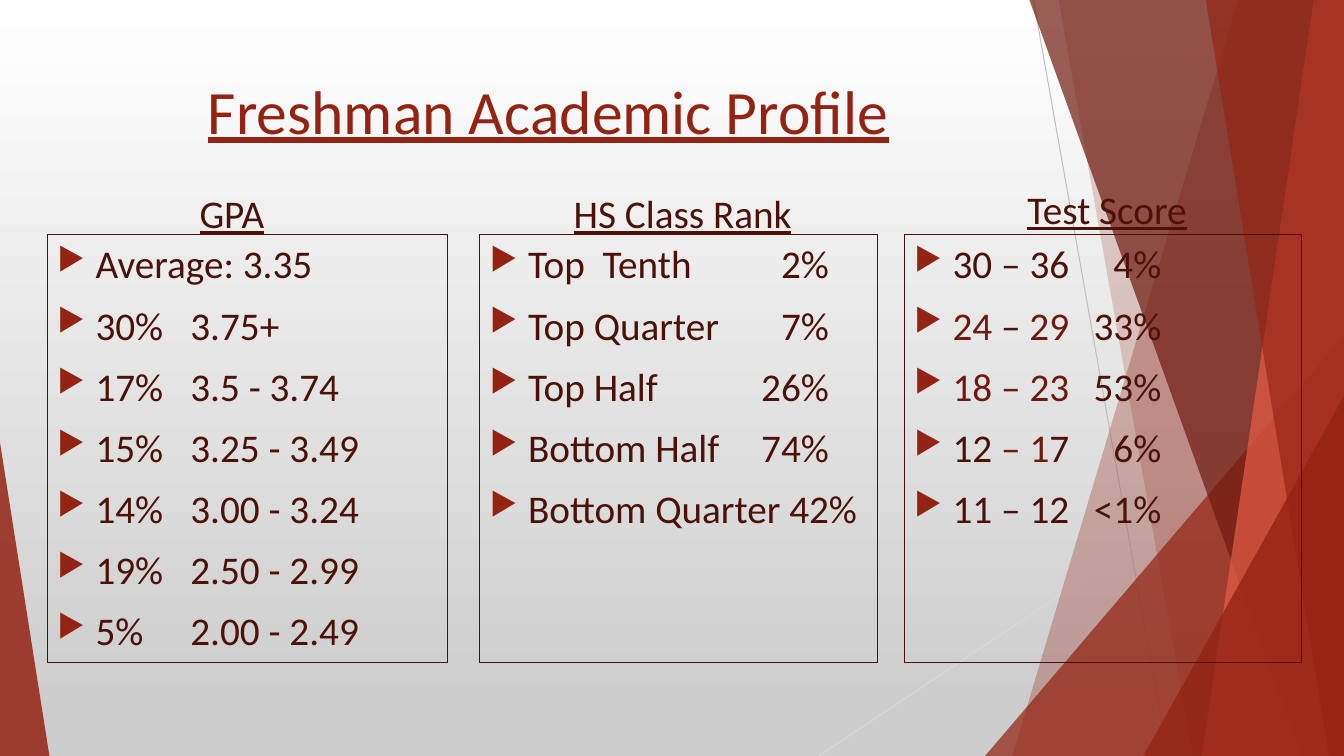
"""Build the Freshman Academic Profile slide with its three boxed score lists."""
from lxml import etree
from pptx import Presentation
from pptx import util as u
from pptx.dml.color import RGBColor
from pptx.enum import shapes, text
from pptx.oxml.ns import qn

RED = RGBColor(0x93, 0x23, 0x13)
DEEP_RED = RGBColor(0x6E, 0x1A, 0x0E)
CORAL = RGBColor(0xE7, 0x5C, 0x48)
MAROON = RGBColor(0x4A, 0x12, 0x09)
WHITE = RGBColor(0xFF, 0xFF, 0xFF)
SILVER = RGBColor(0xCD, 0xCD, 0xCD)
GREY = RGBColor(0xBF, 0xBF, 0xBF)
PALE_GREY = RGBColor(0xD9, 0xD9, 0xD9)
FONT = "Calibri"
WIDTH, HEIGHT = 13.33, 7.5

TITLE = "Freshman Academic Profile"
RAYS = [((10.25, 0), (11.58, HEIGHT), GREY), ((WIDTH, 4.03), (8.12, HEIGHT), PALE_GREY)]
FACETS = [
    ("band", 12.28, 10.04, RED, 30),
    ("band", 10.5, 11.83, RED, 20),
    ("corner", (9.77, 3.33, 3.56, 4.17), 1, RED, 72),
    ("band", 10.21, 12.91, DEEP_RED, 70),
    ("band", 13.03, 11.92, CORAL, 70),
    ("band", 11.96, 13.18, RED, 65),
    ("corner", (11.34, 3.93, 1.99, 3.57), 1, RED, 80),
    ("corner", (0, 4.39, 0.49, 3.11), 0, RED, 85),
]
PROFILES = [
    {"heading": "GPA", "heading_at": (0.55, 1.83), "left": 0.47, "width": 3.97,
     "stop": (1.32, text.PP_ALIGN.LEFT), "rows": [
         "Average: 3.35", "30%\t3.75+", "17%\t3.5 - 3.74", "15%\t3.25 - 3.49",
         "14%\t3.00 - 3.24", "19%\t2.50 - 2.99", "5%\t2.00 - 2.49"]},
    {"heading": "HS Class Rank", "heading_at": (5.02, 1.83), "left": 4.76, "width": 3.94,
     "stop": (3.7, text.PP_ALIGN.RIGHT), "rows": [
         "Top  Tenth\t2%", "Top Quarter\t7%", "Top Half\t26%",
         "Bottom Half\t74%", "Bottom Quarter 42%"]},
    {"heading": "Test Score", "heading_at": (9.23, 1.79), "left": 8.97, "width": 3.94,
     "stop": (2.45, text.PP_ALIGN.RIGHT), "rows": [
         "30 – 36\t4%",
         [("24 ", DEEP_RED), ("–", MAROON), (" 29", DEEP_RED), ("\t33%", MAROON)],
         [("18 – 23", DEEP_RED), ("\t53%", MAROON)],
         [("12 ", MAROON), ("– 1", DEEP_RED), ("7\t6%", MAROON)],
         "11 – 12\t<1%"]},
]
BOX_TOP, BOX_HEIGHT = 2.33, 4.24
HEADING_WIDTH, HEADING_HEIGHT = 3.5, 0.57
INDENT = 0.38


def add_run(paragraph, words, size, color, underline=None):
    run = paragraph.add_run()
    run.text = words
    run.font.name = FONT
    run.font.size = u.Pt(size)
    run.font.color.rgb = color
    run.font.underline = underline


def add_ray(slide, start, end, color):
    ray = slide.shapes.add_connector(
        shapes.MSO_CONNECTOR.STRAIGHT, *map(u.Inches, start + end))
    ray.line.color.rgb = color
    ray.line.width = u.Pt(0.75)
    etree.SubElement(ray._element.spPr, qn("a:effectLst"))


def add_facet(slide, kind, place, turn, color, opacity):
    if kind == "band":
        outline = slide.shapes.build_freeform(u.Inches(place), 0, scale=1.0)
        corners = [(WIDTH, 0), (WIDTH, HEIGHT), (turn, HEIGHT)]
        outline.add_line_segments([(u.Inches(x), u.Inches(y)) for x, y in corners])
        facet = outline.convert_to_shape()
    else:
        facet = slide.shapes.add_shape(
            shapes.MSO_SHAPE.ISOSCELES_TRIANGLE, *map(u.Inches, place))
        facet.adjustments[0] = turn
    facet.shadow.inherit = False
    facet.line.fill.background()
    facet.fill.solid()
    facet.fill.fore_color.rgb = color
    tint = facet._element.spPr.find(qn("a:solidFill"))[0]
    etree.SubElement(tint, qn("a:alpha"), val=str(opacity * 1000))


def add_caption(slide, place, words, size, color):
    caption = slide.shapes.add_textbox(*map(u.Inches, place))
    caption.text_frame.word_wrap = True
    line = caption.text_frame.paragraphs[0]
    line.alignment = text.PP_ALIGN.CENTER
    add_run(line, words, size, color, True)


def set_bullet(paragraph, stop):
    layout = paragraph._p.get_or_add_pPr()
    layout.set("marL", str(u.Inches(INDENT)))
    layout.set("indent", str(-u.Inches(INDENT)))
    tint = etree.SubElement(layout, qn("a:buClr"))
    etree.SubElement(tint, qn("a:srgbClr"), val=str(RED))
    etree.SubElement(layout, qn("a:buSzPct"), val="80000")
    etree.SubElement(layout, qn("a:buChar"), char="▶")
    position, side = stop
    stops = etree.SubElement(layout, qn("a:tabLst"))
    etree.SubElement(stops, qn("a:tab"), pos=str(u.Inches(position)),
                     algn="r" if side == text.PP_ALIGN.RIGHT else "l")


def add_profile(slide, profile):
    box = slide.shapes.add_shape(
        shapes.MSO_SHAPE.RECTANGLE, u.Inches(profile["left"]), u.Inches(BOX_TOP),
        u.Inches(profile["width"]), u.Inches(BOX_HEIGHT))
    box.shadow.inherit = False
    box.fill.background()
    box.line.color.rgb = MAROON
    box.line.width = u.Pt(0.75)
    frame = box.text_frame
    frame.word_wrap = True
    frame.vertical_anchor = text.MSO_ANCHOR.TOP
    for index, row in enumerate(profile["rows"]):
        line = frame.add_paragraph() if index else frame.paragraphs[0]
        line.alignment = text.PP_ALIGN.LEFT
        line.space_before = u.Pt(10)
        set_bullet(line, profile["stop"])
        for words, color in [(row, MAROON)] if isinstance(row, str) else row:
            add_run(line, words, 28, color)
    add_caption(slide, profile["heading_at"] + (HEADING_WIDTH, HEADING_HEIGHT),
                profile["heading"], 28, MAROON)


def main():
    deck = Presentation()
    deck.slide_width, deck.slide_height = u.Inches(WIDTH), u.Inches(HEIGHT)
    slide = deck.slides.add_slide(deck.slide_layouts[6])
    backdrop = slide.background.fill
    backdrop.gradient()
    backdrop.gradient_angle = 270
    for stop, (position, color) in zip(backdrop.gradient_stops, [(0, WHITE), (0.94, SILVER)]):
        stop.position = position
        stop.color.rgb = color
    for ray in RAYS:
        add_ray(slide, *ray)
    for facet in FACETS:
        add_facet(slide, *facet)
    add_caption(slide, (0.74, 0.67, 9.4, 1.44), TITLE, 44, RED)
    for profile in PROFILES:
        add_profile(slide, profile)
    deck.save("out.pptx")


if __name__ == "__main__":
    main()
